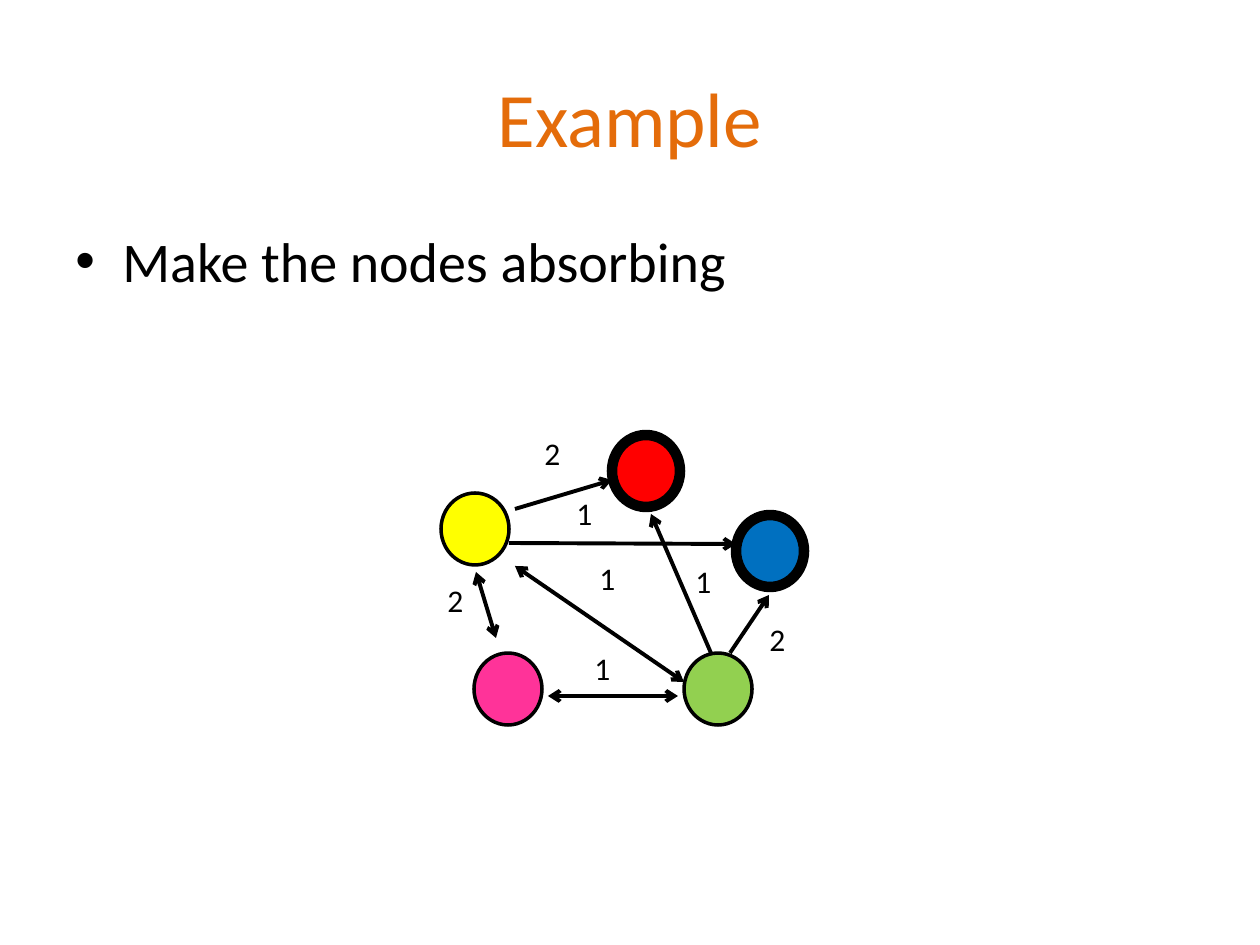
from lxml import etree
from pptx import Presentation
from pptx.dml.color import RGBColor
from pptx.enum.shapes import MSO_CONNECTOR as Line, MSO_SHAPE as Shape
from pptx.enum.text import MSO_ANCHOR as Anchor, MSO_AUTO_SIZE as Fit, PP_ALIGN as Align
from pptx.oxml.ns import qn
from pptx.util import Pt

PX = 914400 / 126


def color(value):
    return RGBColor.from_string(value)


def add_text(text, bounds, size, ink="000000"):
    box = page.shapes.add_textbox(*[round(n * PX) for n in bounds])
    para = box.text_frame.paragraphs[0]
    para.text = text
    para.font.name = "Calibri"
    para.font.size = Pt(size)
    para.font.color.rgb = color(ink)
    return box.text_frame, para


deck = Presentation()
deck.slide_width, deck.slide_height = round(1260 * PX), round(945 * PX)
page = deck.slides.add_slide(deck.slide_layouts[6])

# Title
frame, para = add_text("Example", (63, 38, 1134, 158), 44, "E46C0A")
frame.word_wrap = True
frame.vertical_anchor = Anchor.MIDDLE
para.alignment = Align.CENTER

# Bullet
frame, para = add_text("Make the nodes absorbing", (63, 220, 1134, 624), 32)
frame.word_wrap = True
para.space_before = Pt(6.4)
props = para._p.get_or_add_pPr()
indent = round(47 * PX)
props.set("marL", str(indent))
props.set("indent", str(-indent))
bullet_font = etree.Element(qn("a:buFont"), typeface="Arial")
bullet = etree.Element(qn("a:buChar"), char="•")
spacing = props.find(qn("a:spcBef"))
spacing.addnext(bullet_font)
bullet_font.addnext(bullet)

# Edges: start, end, arrowheads at
edges = [
    ((548, 696), (678, 696), ("headEnd", "tailEnd")),
    ((496, 638), (476, 572), ("headEnd", "tailEnd")),
    ((515, 509), (612, 480), ("tailEnd",)),
    ((509, 543), (736, 544), ("tailEnd",)),
    ((711, 653), (651, 514), ("tailEnd",)),
    ((730, 653), (769, 595), ("tailEnd",)),
    ((684, 682), (515, 566), ("headEnd", "tailEnd")),
]
for start, end, arrowheads in edges:
    points = [round(n * PX) for n in start + end]
    edge = page.shapes.add_connector(Line.STRAIGHT, *points)
    edge.line.color.rgb = color("000000")
    edge.line.width = Pt(2.25)
    outline = edge.line._get_or_add_ln()
    for arrowhead in arrowheads:
        etree.SubElement(outline, qn(f"a:{arrowhead}"), type="arrow")
    etree.SubElement(edge._element.spPr, qn("a:effectLst"))

# Nodes: absorbing ones have a thick outline
nodes = [
    (612, 435, "FF0000", 6),
    (736, 515, "0070C0", 6),
    (684, 653, "92D050", 2),
    (474, 653, "FF3399", 2),
    (441, 493, "FFFF00", 2),
]
for left, top, fill, width in nodes:
    bounds = [round(n * PX) for n in (left, top, 68, 72)]
    node = page.shapes.add_shape(Shape.OVAL, *bounds)
    node.shadow.inherit = False
    node.fill.solid()
    node.fill.fore_color.rgb = color(fill)
    node.line.color.rgb = color("000000")
    node.line.width = Pt(width)

# Edge weights
weights = [
    ("2", 532, 428),
    ("2", 435, 575),
    ("1", 564, 488),
    ("1", 587, 553),
    ("1", 582, 643),
    ("2", 757, 614),
    ("1", 683, 556),
]
for weight, left, top in weights:
    frame, para = add_text(weight, (left, top, 43, 50), 18)
    frame.word_wrap = False
    frame.auto_size = Fit.SHAPE_TO_FIT_TEXT

deck.save("out.pptx")
